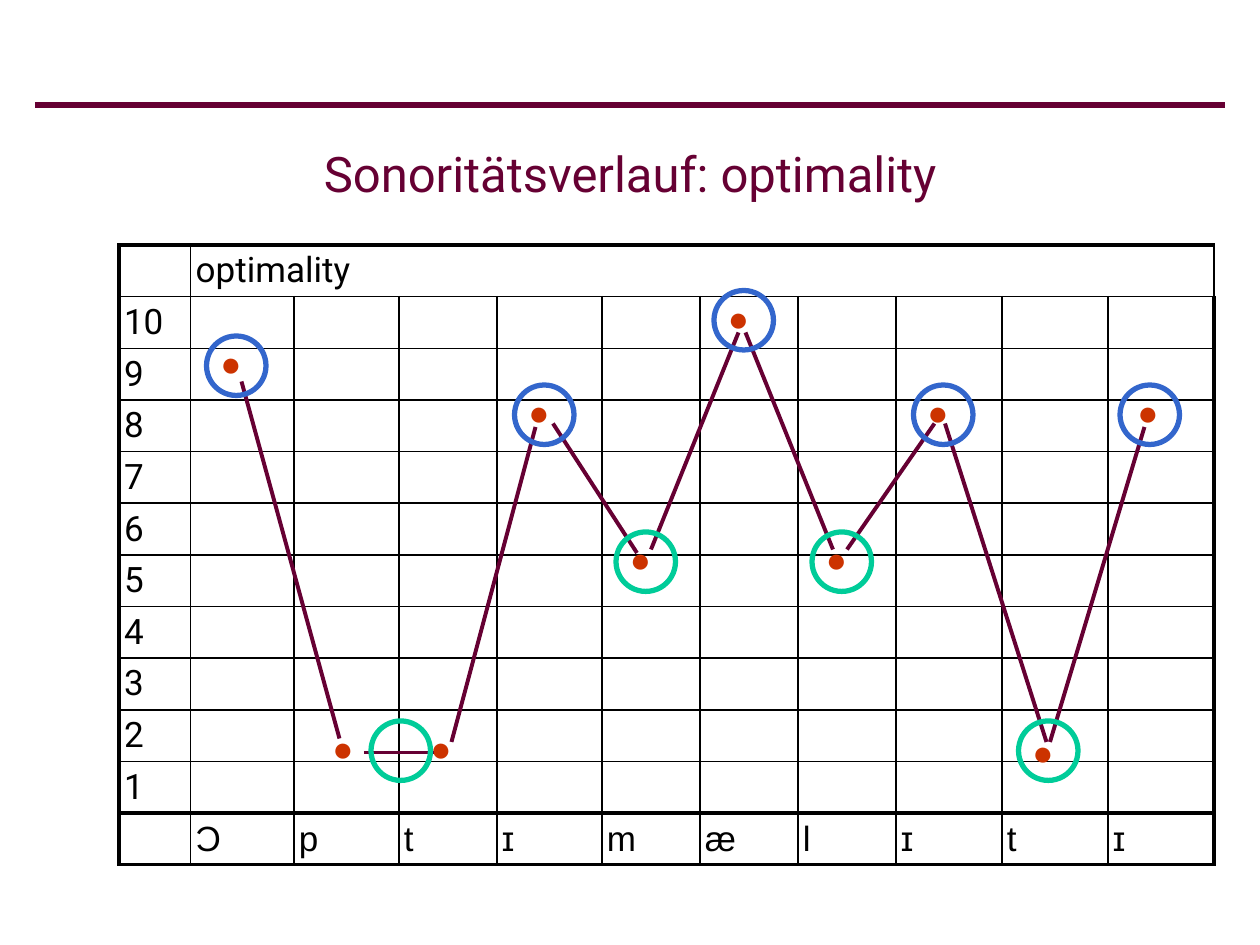
from lxml import etree
from pptx import Presentation
from pptx import util as u
from pptx.dml.color import RGBColor
from pptx.enum import shapes, text
from pptx.oxml import ns

PLUM = RGBColor(0x66, 0x00, 0x33)
BLACK = RGBColor(0x00, 0x00, 0x00)
RED = RGBColor(0xCC, 0x33, 0x00)
BLUE = RGBColor(0x33, 0x66, 0xCC)
GREEN = RGBColor(0x00, 0xCC, 0x99)

deck = Presentation()
deck.slide_width, deck.slide_height = u.Inches(10), u.Inches(7.5)
UNIT = deck.slide_width / 360  # the page is a grid of 360 columns by 270 rows


def grid(*counts):
    return [round(count * UNIT) for count in counts]


def add_line(parent, start, end, width):
    line = parent.add_connector(shapes.MSO_CONNECTOR.STRAIGHT, *grid(*start, *end))
    line.line.color.rgb = PLUM
    line.line.width = u.Pt(width)
    etree.SubElement(line._element.spPr, ns.qn("a:effectLst"))


page = deck.slides.add_slide(deck.slide_layouts[5])

# Rule and title
add_line(page.shapes, (10, 30), (350, 30), 3)
title = page.shapes.title
title.left, title.top, title.width, title.height = grid(10, 30, 340, 39)
title.text_frame.text = "Sonoritätsverlauf: optimality"
title.text_frame.vertical_anchor = text.MSO_ANCHOR.MIDDLE
para = title.text_frame.paragraphs[0]
para.alignment = text.PP_ALIGN.CENTER
para.font.size, para.font.name = u.Pt(28), "Roboto"
para.font.color.rgb = PLUM

# Sonority table: header row, levels 10 to 1, row of sounds
SOUNDS = ["Ɔ", "p", "t", "ɪ", "m", "æ", "l", "ɪ", "t", "ɪ"]
COLUMNS = [20.5, 29.5, 30, 28, 30, 28, 28, 28, 30.3, 30.3, 30.3]
ROW = 14.76
rows = [["", "optimality"]]
rows += [[str(level)] for level in range(10, 0, -1)]
rows += [[""] + SOUNDS]
last_row, last_column = len(rows) - 1, len(COLUMNS) - 1

table = page.shapes.add_table(
    len(rows), len(COLUMNS), *grid(34, 70, sum(COLUMNS), ROW * len(rows))
).table
table.first_row = table.horz_banding = False
for column, width in zip(table.columns, grid(*COLUMNS)):
    column.width = width
for r, words in enumerate(rows):
    table.rows[r].height = grid(ROW)[0]
    for c in range(len(COLUMNS)):
        cell = table.cell(r, c)
        cell.margin_left = cell.margin_right = u.Inches(0.04)
        cell.margin_top = cell.margin_bottom = u.Inches(0.04)
        cell.vertical_anchor = text.MSO_ANCHOR.MIDDLE
        thick_sides = {
            "L": c == 0,
            "R": c == last_column,
            "T": r in (0, last_row),
            "B": r >= last_row - 1,
        }
        properties = cell._tc.get_or_add_tcPr()
        for side, thick in thick_sides.items():
            border = etree.SubElement(properties, ns.qn(f"a:ln{side}"))
            border.set("w", str(u.Pt(2.25 if thick else 1)))
            fill = etree.SubElement(border, ns.qn("a:solidFill"))
            etree.SubElement(fill, ns.qn("a:srgbClr")).set("val", str(BLACK))
        cell.fill.background()
        para = cell.text_frame.paragraphs[0]
        para.text = words[c] if c < len(words) else ""
        para.font.size = u.Pt(20)
        para.font.name = "Arial" if r == last_row else "Roboto"
        para.font.color.rgb = BLACK
table.cell(0, 1).merge(table.cell(0, last_column))

# Sonority curve: one dot per sound, lines between them
PEAK, SONORANT, STOP = 113, 155, 209
DOTS = [
    (63, 99), (95, STOP), (123, STOP), (151, PEAK), (180, SONORANT),
    (208, 86), (236, SONORANT), (265, PEAK), (295, STOP + 1), (325, PEAK),
]
LINES = [
    ((69, 109), (97, 211)), ((104, 215), (124, 215)), ((129, 212), (153, 122)),
    ((158, 121), (182, 158)), ((186, 157), (211, 95)), ((213, 95), (238, 157)),
    ((242, 157), (267, 121)), ((270, 121), (299, 212)), ((300, 212), (327, 122)),
]
curve = page.shapes.add_group_shape().shapes
for left, top in DOTS:
    box = curve.add_textbox(*grid(left, top, 10, 11))
    frame = box.text_frame
    frame.margin_left = frame.margin_right = 0
    frame.margin_top = frame.margin_bottom = 0
    frame.word_wrap = True
    frame.auto_size = text.MSO_AUTO_SIZE.SHAPE_TO_FIT_TEXT
    frame.text = "●"
    para = frame.paragraphs[0]
    para.line_spacing = 0.9
    para.font.size, para.font.name = u.Pt(20), "Arial"
    para.font.color.rgb = RED
for start, end in LINES:
    add_line(curve, start, end, 2.25)

# Rings: blue for syllable peaks, green for valleys
RINGS = {
    BLUE: [(59, 96), (147, 110), (204, 83), (261, 110), (320, 110)],
    GREEN: [(106, 206), (176, 152), (232, 152), (291, 206)],
}
for color, places in RINGS.items():
    for left, top in places:
        ring = page.shapes.add_shape(shapes.MSO_SHAPE.OVAL, *grid(left, top, 17, 17))
        ring.shadow.inherit = False
        ring.fill.background()
        ring.line.color.rgb = color
        ring.line.width = u.Pt(3)

deck.save("out.pptx")
